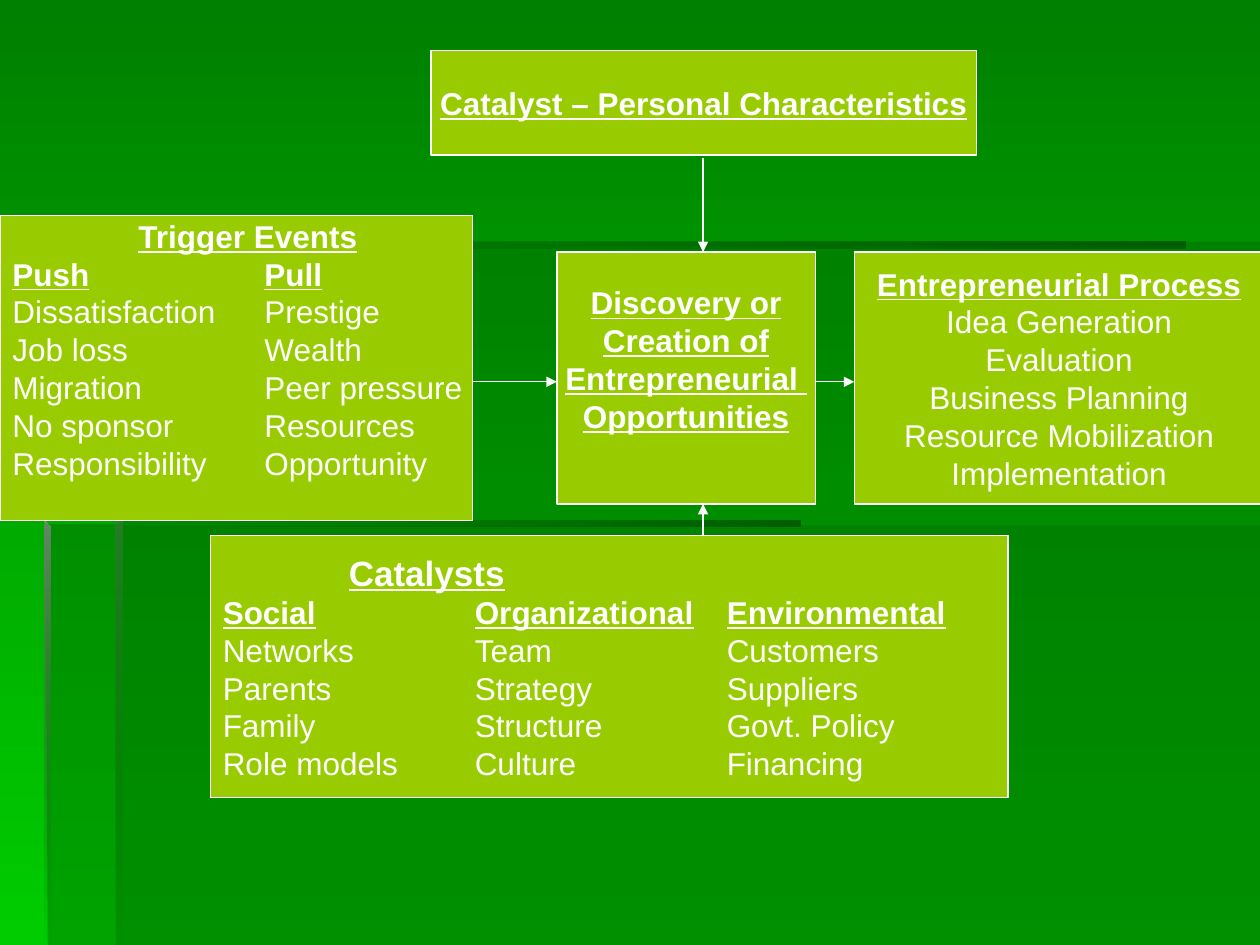
from dataclasses import dataclass

from lxml.etree import SubElement
from pptx import Presentation
from pptx.dml.color import RGBColor
from pptx.enum.shapes import MSO_CONNECTOR, MSO_SHAPE
from pptx.enum.text import MSO_ANCHOR, PP_ALIGN
from pptx.oxml.ns import qn
from pptx.util import Inches, Pt

WHITE, LIME = "FFFFFF", "99CC00"
PANEL_GREEN, BAR_GREEN, BAR_GREY = "006600", "005E00", "668666"
TITLE_STOPS, COLUMN_STOPS = (1,), (2, 4)


@dataclass
class Stop:
    color: str
    opacity: int = 100


@dataclass
class Backdrop:
    """A borderless outline; two stops make a gradient."""
    points: list[tuple[float, float]]
    stops: list[Stop]
    angle: int = 0


@dataclass
class Box:
    """Rows hold one text per column; the first `headings` rows are bold."""
    left: float
    top: float
    width: float
    height: float
    rows: list[tuple[str, ...]]
    headings: int = 1
    align: PP_ALIGN = PP_ALIGN.CENTER
    title_size: int = 18
    space_below: float = 0


@dataclass
class Arrow:
    start: tuple[float, float]
    end: tuple[float, float]


def bar(left: float, top: float, right: float, bottom: float) -> list[tuple[float, float]]:
    return [(left, top), (left, bottom), (right, bottom), (right, top)]


def post(left: float, top: float) -> list[tuple[float, float]]:
    """A thin upright strip to the slide's foot, slanted at its top."""
    return [(left, top), (left, 7.5), (left + 0.05, 7.5), (left + 0.05, top + 0.06)]


FADE_IN = [Stop(PANEL_GREEN, 0), Stop(BAR_GREEN)]
FADE_OUT = [Stop(BAR_GREY), Stop(PANEL_GREEN, 0)]
BACKDROPS = [
    Backdrop([(0.95, 1.92), (0.94, 4.16), (0.36, 4.16), (0.38, 7.5), (10, 7.5), (10, 1.92)],
             [Stop(PANEL_GREEN, 40)]),
    Backdrop(bar(0.92, 4.17, 10, 7.5), [Stop(PANEL_GREEN, 30)]),
    Backdrop(bar(0.35, 4.13, 6.35, 4.18), FADE_IN),
    Backdrop(bar(0.92, 1.92, 9.41, 1.97), FADE_IN),
    Backdrop(post(0.35, 4.13), FADE_OUT, 270),
    Backdrop(post(0.92, 1.92), FADE_OUT, 270),
]

BOXES = [
    Box(6.78, 2, 3.25, 2, [
        ("Entrepreneurial Process",), ("Idea Generation",), ("Evaluation",),
        ("Business Planning",), ("Resource Mobilization",), ("Implementation",)]),
    Box(1.67, 4.25, 6.33, 2.08, [
        ("", "Catalysts"),
        ("Social", "Organizational", "Environmental"),
        ("Networks", "Team", "Customers"),
        ("Parents", "Strategy", "Suppliers"),
        ("Family", "Structure", "Govt. Policy"),
        ("Role models", "Culture", "Financing")],
        headings=2, align=PP_ALIGN.LEFT, title_size=20),
    Box(0, 1.71, 3.75, 2.42, [
        ("", "Trigger Events"),
        ("Push", "Pull"),
        ("Dissatisfaction", "Prestige"),
        ("Job loss", "Wealth"),
        ("Migration", "Peer pressure"),
        ("No sponsor", "Resources"),
        ("Responsibility", "Opportunity")],
        headings=2, align=PP_ALIGN.LEFT, space_below=0.3),
    Box(3.42, 0.4, 4.33, 0.83, [("Catalyst – Personal Characteristics",)]),
    Box(4.42, 2, 2.05, 2, [
        ("Discovery or",), ("Creation of",), ("Entrepreneurial ",), ("Opportunities",)],
        headings=4, space_below=0.3),
]

ARROWS = [
    Arrow((3.75, 3.03), (4.42, 3.03)),
    Arrow((5.58, 4.25), (5.58, 4)),
    Arrow((5.58, 1.25), (5.58, 2)),
    Arrow((6.47, 3.03), (6.78, 3.03)),
]


def rgb(color: str) -> RGBColor:
    return RGBColor.from_string(color)


def paint(fill, stops: list[Stop], angle: int = 0) -> None:
    if len(stops) == 1:
        fill.solid()
        fill.fore_color.rgb = rgb(stops[0].color)
        return
    fill.gradient()
    fill.gradient_angle = angle
    for position, (target, stop) in enumerate(zip(fill.gradient_stops, stops)):
        target.position = position
        target.color.rgb = rgb(stop.color)


def draw_backdrop(slide, backdrop: Backdrop) -> None:
    first, *others = [(Inches(x), Inches(y)) for x, y in backdrop.points]
    builder = slide.shapes.build_freeform(*first)
    builder.add_line_segments(others, close=True)
    shape = builder.convert_to_shape()
    shape.shadow.inherit = False
    shape.line.fill.background()
    paint(shape.fill, backdrop.stops, backdrop.angle)
    colors = shape._element.spPr.iter(qn("a:srgbClr"))
    for color, stop in zip(colors, backdrop.stops):
        SubElement(color, qn("a:alpha"), val=str(stop.opacity * 1000))


def add_tab_stops(paragraph, stops: tuple[int, ...]) -> None:
    tab_list = SubElement(paragraph._p.get_or_add_pPr(), qn("a:tabLst"))
    for stop in stops:
        SubElement(tab_list, qn("a:tab"), pos=str(Inches(stop)), algn="l")


def add_run(paragraph, text: str, size: int, bold: bool, underline: bool) -> None:
    run = paragraph.add_run()
    run.text = text
    formats = {"name": "Arial", "size": Pt(size), "bold": bold, "underline": underline}
    for name, value in formats.items():
        setattr(run.font, name, value)
    run.font.color.rgb = rgb(WHITE)


def draw_box(slide, box: Box) -> None:
    frame = (box.left, box.top, box.width, box.height)
    shape = slide.shapes.add_shape(MSO_SHAPE.RECTANGLE, *map(Inches, frame))
    shape.shadow.inherit = False
    paint(shape.fill, [Stop(LIME)])
    shape.line.color.rgb = rgb(WHITE)
    shape.line.width = Pt(0.75)
    text_frame = shape.text_frame
    formats = {"word_wrap": False, "vertical_anchor": MSO_ANCHOR.MIDDLE,
               "margin_top": 0, "margin_bottom": Inches(box.space_below)}
    for name, value in formats.items():
        setattr(text_frame, name, value)
    for index, row in enumerate(box.rows):
        paragraph = text_frame.add_paragraph() if index else text_frame.paragraphs[0]
        paragraph.alignment = box.align
        if len(row) > 1:
            add_tab_stops(paragraph, COLUMN_STOPS if row[0] else TITLE_STOPS)
        size = 18 if index else box.title_size
        heading = index < box.headings
        for column, text in enumerate(row):
            if column:
                add_run(paragraph, "\t", size, heading, False)
            if text:
                add_run(paragraph, text, size, heading, heading)


def draw_arrow(slide, arrow: Arrow) -> None:
    ends = map(Inches, arrow.start + arrow.end)
    connector = slide.shapes.add_connector(MSO_CONNECTOR.STRAIGHT, *ends)
    connector.line.color.rgb = rgb(WHITE)
    connector.line.width = Pt(0.75)
    SubElement(connector.line._get_or_add_ln(), qn("a:tailEnd"), type="triangle")
    SubElement(connector._element.spPr, qn("a:effectLst"))


def main() -> None:
    presentation = Presentation()
    presentation.slide_width, presentation.slide_height = Inches(10), Inches(7.5)
    slide = presentation.slides.add_slide(presentation.slide_layouts[6])
    paint(slide.background.fill, [Stop("008000"), Stop("00CC00")], 270)
    for draw, items in ((draw_backdrop, BACKDROPS), (draw_box, BOXES), (draw_arrow, ARROWS)):
        for item in items:
            draw(slide, item)
    presentation.save("out.pptx")


if __name__ == "__main__":
    main()
